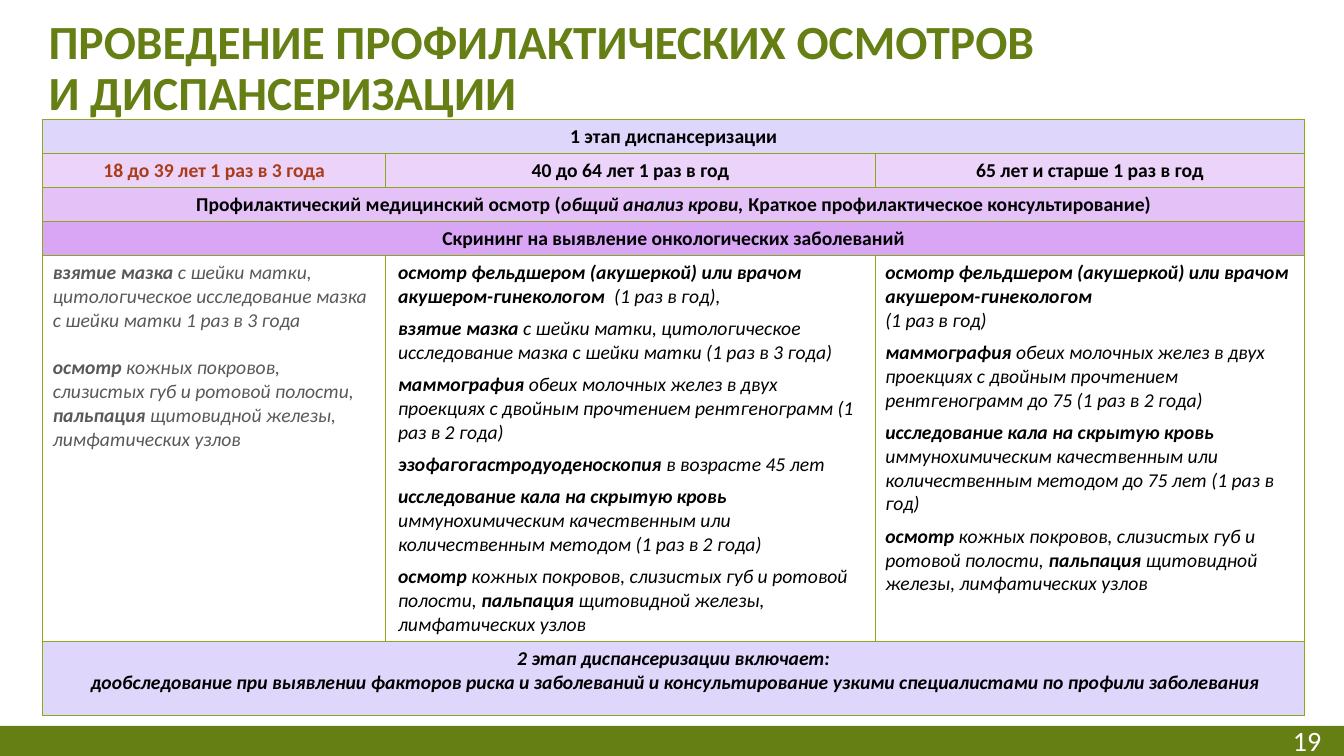
from dataclasses import dataclass

from lxml import etree
from pptx import Presentation
from pptx.dml.color import RGBColor
from pptx.enum.shapes import MSO_SHAPE
from pptx.enum.text import MSO_ANCHOR, PP_ALIGN
from pptx.oxml.ns import qn
from pptx.util import Cm, Pt

RECTANGLE = MSO_SHAPE.RECTANGLE
BOTTOM, MIDDLE = MSO_ANCHOR.BOTTOM, MSO_ANCHOR.MIDDLE
LEFT, CENTER, RIGHT = PP_ALIGN.LEFT, PP_ALIGN.CENTER, PP_ALIGN.RIGHT


@dataclass(frozen=True)
class Theme:
    font: str = "Calibri"
    title_size: int = 34
    table_size: int = 14
    number_size: int = 20
    green: str = "657F14"
    border: str = "87A91B"
    black: str = "000000"
    gray: str = "595959"
    rust: str = "AB3C19"
    white: str = "FFFFFF"
    stage: str = "DFD6FC"
    ages: str = "EBD3F9"
    checkup: str = "E4C2F7"
    screening: str = "D8A6F4"


THEME = Theme()
BOLD, ITALIC, BOTH = "b", "i", "bi"

TITLE = "ПРОВЕДЕНИЕ ПРОФИЛАКТИЧЕСКИХ ОСМОТРОВ И ДИСПАНСЕРИЗАЦИИ"
PAGE = "19"

STAGE_ONE = [(0, [("1 этап диспансеризации", BOLD)])]
AGE_GROUPS = [
    ("18 до 39 лет 1 раз в 3 года", THEME.rust),
    ("40 до 64 лет 1 раз в год", THEME.black),
    ("65 лет и старше 1 раз в год", THEME.black),
]
CHECKUP = [(0, [
    ("Профилактический медицинский осмотр (", BOLD),
    ("общий анализ крови, ", BOTH),
    ("Краткое профилактическое консультирование)", BOLD),
])]
SCREENING = [(0, [("Скрининг на выявление онкологических заболеваний", BOLD)])]
STAGE_TWO = [
    (0, [("2 этап диспансеризации включает:", BOTH)]),
    (0, [(" дообследование при выявлении факторов риска и заболеваний и "
          "консультирование узкими специалистами по профили заболевания", BOTH)]),
]

EXAMINER = "осмотр фельдшером (акушеркой) или врачом акушером-гинекологом"
PALPATION = [
    ("осмотр ", BOTH),
    ("кожных покровов, слизистых губ и ротовой полости, ", ITALIC),
    ("пальпация ", BOTH),
    ("щитовидной железы, лимфатических узлов", ITALIC),
]
YOUNG = [
    (0, [("взятие мазка ", BOTH),
         ("с шейки матки, цитологическое исследование мазка с шейки матки 1 раз в 3 года", ITALIC)]),
    (17, PALPATION),
]
MIDDLE_AGED = [
    (6, [(EXAMINER + "  ", BOTH), ("(1 раз в год),", ITALIC)]),
    (6, [("взятие мазка ", BOTH),
         ("с шейки матки, цитологическое исследование мазка с шейки матки (1 раз в 3 года)", ITALIC)]),
    (6, [("маммография ", BOTH),
         ("обеих молочных желез в двух проекциях с двойным прочтением рентгенограмм "
          "(1 раз в 2 года)", ITALIC)]),
    (6, [("эзофагогастродуоденоскопия ", BOTH), ("в возрасте 45 лет", ITALIC)]),
    (6, [("исследование кала на скрытую кровь ", BOTH),
         ("иммунохимическим качественным или количественным методом (1 раз в 2 года)", ITALIC)]),
    (6, PALPATION),
]
SENIOR = [
    (0, [(EXAMINER, BOTH)]),
    (0, [("(1 раз в год)", ITALIC)]),
    (6, [("маммография", BOTH),
         (" обеих молочных желез в двух проекциях с двойным прочтением рентгенограмм "
          "до 75 (1 раз в 2 года)", ITALIC)]),
    (6, [("исследование кала на скрытую кровь", BOTH),
         (" иммунохимическим качественным или количественным методом до 75 лет (1 раз в год)", ITALIC)]),
    (6, PALPATION),
]
EXAMS = [(YOUNG, THEME.gray, 0.25), (MIDDLE_AGED, THEME.black, 0.31), (SENIOR, THEME.black, 0.25)]
BANDS = {
    0: (STAGE_ONE, THEME.stage),
    2: (CHECKUP, THEME.checkup),
    3: (SCREENING, THEME.screening),
    5: (STAGE_TWO, THEME.stage),
}

SLIDE_W, SLIDE_H = 33.87, 19.05
FOOTER_H = 0.76
COLUMN_WIDTHS = [8.64, 12.34, 10.82]
ROW_HEIGHTS = [0.85] * 4 + [9.72, 1.85]


def rgb(color):
    return RGBColor.from_string(color)


def write(frame, paragraphs, size, color, align):
    frame.word_wrap = True
    for index, (gap, runs) in enumerate(paragraphs):
        paragraph = frame.add_paragraph() if index else frame.paragraphs[0]
        paragraph.alignment = align
        paragraph.space_before = Pt(gap)
        for text, style in runs:
            run = paragraph.add_run()
            run.text = text
            run.font.name = THEME.font
            run.font.size = Pt(size)
            run.font.bold = "b" in style
            run.font.italic = "i" in style
            run.font.color.rgb = rgb(color)


def outline(cell):
    properties = cell._tc.get_or_add_tcPr()
    for position, side in enumerate(("lnL", "lnR", "lnT", "lnB")):
        line = etree.Element(qn(f"a:{side}"), w=str(Pt(1)))
        fill = etree.SubElement(line, qn("a:solidFill"))
        etree.SubElement(fill, qn("a:srgbClr"), val=THEME.border)
        properties.insert(position, line)


def fill_cell(cell, paragraphs, color, align, background=None):
    if background:
        cell.fill.solid()
        cell.fill.fore_color.rgb = rgb(background)
    else:
        cell.fill.background()
    write(cell.text_frame, paragraphs, THEME.table_size, color, align)


def add_title(slide):
    title = slide.shapes.title
    title.left, title.top, title.width, title.height = Cm(0.97), Cm(0), Cm(25.4), Cm(3.18)
    title.text_frame.vertical_anchor = BOTTOM
    write(title.text_frame, [(0, [(TITLE, BOLD)])], THEME.title_size, THEME.green, LEFT)
    title.text_frame.paragraphs[0].line_spacing = 0.9


def add_schedule(slide):
    table = slide.shapes.add_table(
        len(ROW_HEIGHTS), len(COLUMN_WIDTHS), Cm(1.08), Cm(3.02),
        Cm(sum(COLUMN_WIDTHS)), Cm(sum(ROW_HEIGHTS))).table
    table.first_row = table.horz_banding = False
    for column, width in zip(table.columns, COLUMN_WIDTHS):
        column.width = Cm(width)
    for row, height in zip(table.rows, ROW_HEIGHTS):
        row.height = Cm(height)
    for cell in table.iter_cells():
        outline(cell)
    for row, (paragraphs, background) in BANDS.items():
        table.cell(row, 0).merge(table.cell(row, len(COLUMN_WIDTHS) - 1))
        fill_cell(table.cell(row, 0), paragraphs, THEME.black, CENTER, background)
    for column, (label, color) in enumerate(AGE_GROUPS):
        fill_cell(table.cell(1, column), [(0, [(label, BOLD)])], color, CENTER, THEME.ages)
    for column, (paragraphs, color, margin) in enumerate(EXAMS):
        cell = table.cell(4, column)
        cell.margin_left = Cm(margin)
        fill_cell(cell, paragraphs, color, LEFT)


def add_footer(slide):
    top = SLIDE_H - FOOTER_H
    footer = slide.shapes.add_shape(RECTANGLE, Cm(0), Cm(top), Cm(SLIDE_W), Cm(FOOTER_H))
    footer.shadow.inherit = False
    footer.fill.solid()
    footer.fill.fore_color.rgb = rgb(THEME.green)
    footer.line.fill.background()
    number = slide.shapes.add_textbox(Cm(31.39), Cm(top + 0.05), Cm(2.16), Cm(0.64))
    number.text_frame.vertical_anchor = MIDDLE
    write(number.text_frame, [(0, [(PAGE, "")])], THEME.number_size, THEME.white, RIGHT)


def main():
    deck = Presentation()
    deck.slide_width, deck.slide_height = Cm(SLIDE_W), Cm(SLIDE_H)
    slide = deck.slides.add_slide(deck.slide_layouts[5])
    add_title(slide)
    add_schedule(slide)
    add_footer(slide)
    deck.save("out.pptx")


if __name__ == "__main__":
    main()
